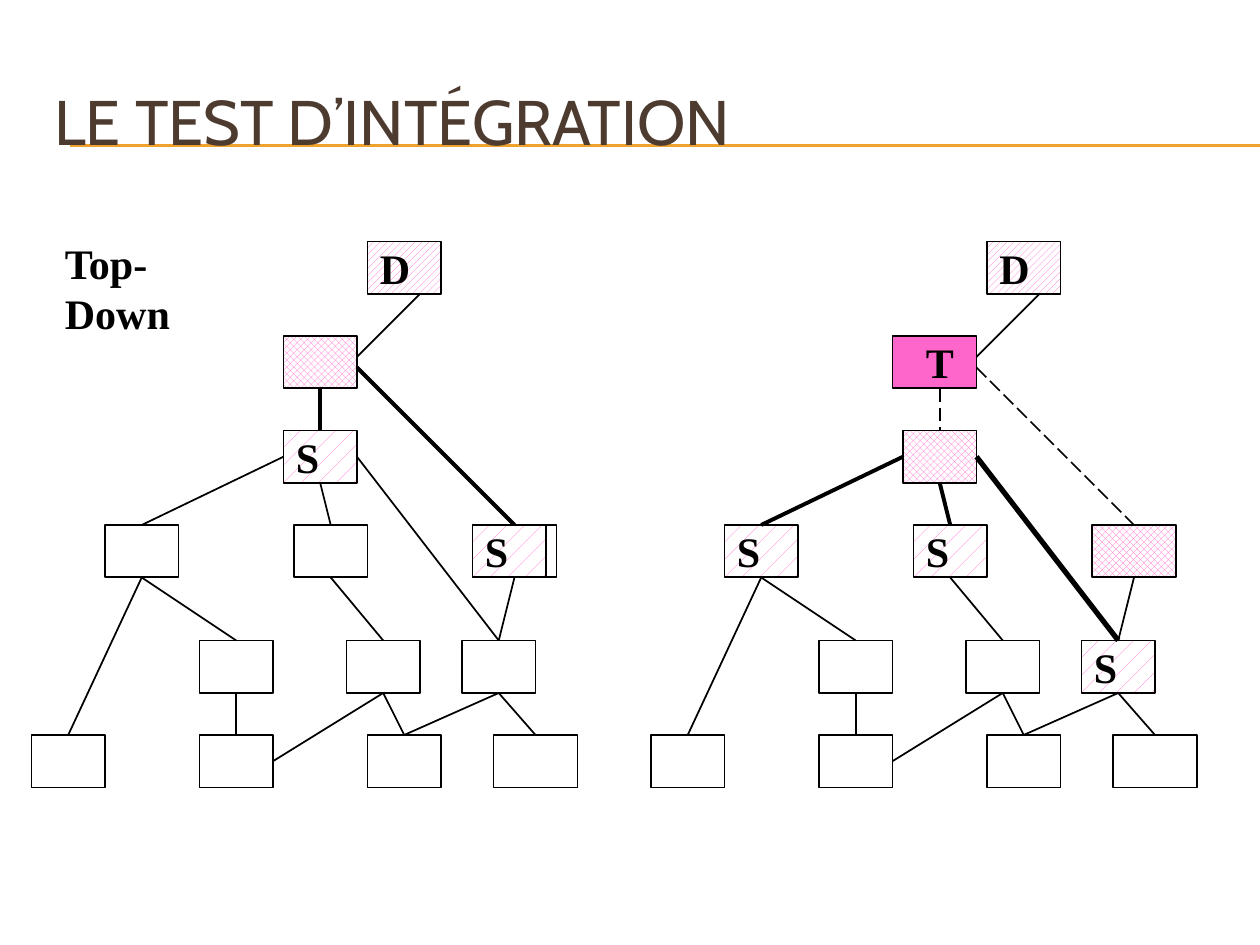
from dataclasses import dataclass
from typing import Optional

from lxml import etree
from pptx import Presentation
from pptx import util as u
from pptx.dml.color import RGBColor
from pptx.enum import dml, shapes, text
from pptx.oxml import ns

COLOURS = {"ink": "000000", "title": "4E3B30", "rule": "F0A22E",
           "pink": "FF66CC", "paper": "FFFFFF"}
PATTERNS = {"driver": dml.MSO_PATTERN.WIDE_UPWARD_DIAGONAL,
            "tested": dml.MSO_PATTERN.OUTLINED_DIAMOND,
            "stub": dml.MSO_PATTERN.PERCENT_5}
LABEL_FONT = {"name": "Times New Roman", "size": u.Pt(24), "bold": True}
TITLE_FONT = {"name": "Cabin", "size": u.Pt(36), "bold": False}
FRAME = {"word_wrap": True, "vertical_anchor": text.MSO_ANCHOR.MIDDLE}
TOP, LEFT, BOTTOM, RIGHT = range(4)
NARROW, WIDE, HEIGHT = 42, 48, 30
TREE_GAP = 354


@dataclass(frozen=True)
class Module:
    x: float
    y: float
    width: float = NARROW


@dataclass(frozen=True)
class Link:
    """A line between two ends; an end is (module name, side) or a point."""
    start: tuple
    end: tuple
    kind: str = ""


@dataclass(frozen=True)
class Look:
    style: str
    label: str = ""


MODULES = {
    "driver": Module(210, 138), "root": Module(162, 192), "hub": Module(162, 246),
    "west": Module(60, 300), "centre": Module(168, 300), "east": Module(270, 300, WIDE),
    "low west": Module(114, 366), "low centre": Module(198, 366), "low east": Module(264, 366),
    "leaf 1": Module(18, 420), "leaf 2": Module(114, 420),
    "leaf 3": Module(210, 420), "leaf 4": Module(282, 420, WIDE),
}
LINKS = [
    Link((240, 168), (204, 204)),
    Link(("root", BOTTOM), ("hub", TOP), "root"),
    Link((204, 210), ("east", TOP), "root"),
    Link(("hub", LEFT), ("west", TOP), "hub"),
    Link(("hub", BOTTOM), ("centre", TOP), "hub"),
    Link(("hub", RIGHT), ("low east", TOP), "hub long"),
    Link(("east", BOTTOM), ("low east", TOP)),
    Link(("west", BOTTOM), ("low west", TOP)),
    Link(("west", BOTTOM), ("leaf 1", TOP)),
    Link(("low west", BOTTOM), ("leaf 2", TOP)),
    Link(("centre", BOTTOM), ("low centre", TOP)),
    Link(("low centre", BOTTOM), ("leaf 2", RIGHT)),
    Link(("low centre", BOTTOM), ("leaf 3", TOP)),
    Link(("low east", BOTTOM), ("leaf 4", TOP)),
    Link(("low east", BOTTOM), ("leaf 3", TOP)),
]
DRIVER, STUB, TESTED = Look("driver", "D"), Look("stub", "S"), Look("tested")
FIRST_STEP = {"driver": DRIVER, "root": TESTED, "hub": STUB}
SECOND_STEP = {"driver": DRIVER, "hub": TESTED, "west": STUB, "centre": STUB,
               "east": TESTED, "low east": STUB}


def rgb(name: str) -> RGBColor:
    return RGBColor.from_string(COLOURS[name])


def set_all(target, values: dict) -> None:
    for name, value in values.items():
        setattr(target, name, value)


def write(box, words: str, font: dict = LABEL_FONT, colour: str = "ink") -> None:
    set_all(box.text_frame, FRAME)
    para = box.text_frame.paragraphs[0]
    para.alignment = text.PP_ALIGN.LEFT
    span = para.add_run()
    span.text = words
    set_all(span.font, font)
    span.font.color.rgb = rgb(colour)


def add_label(page, x: float, y: float, width: float, height: float, words: str,
              font: dict = LABEL_FONT, colour: str = "ink"):
    box = page.shapes.add_textbox(u.Pt(x), u.Pt(y), u.Pt(width), u.Pt(height))
    write(box, words, font, colour)
    return box


def add_module(page, module: Module, shift: float, look: Optional[Look] = None):
    box = page.shapes.add_shape(shapes.MSO_SHAPE.RECTANGLE, u.Pt(module.x + shift),
                                u.Pt(module.y), u.Pt(module.width), u.Pt(HEIGHT))
    box.shadow.inherit = False
    box.line.color.rgb = rgb("ink")
    box.line.width = u.Pt(1)
    if look is None:
        box.fill.background()
    elif look.style in PATTERNS:
        box.fill.patterned()
        box.fill.pattern = PATTERNS[look.style]
        box.fill.fore_color.rgb = rgb("pink")
        box.fill.back_color.rgb = rgb("paper")
    else:
        box.fill.solid()
        box.fill.fore_color.rgb = rgb("pink")
    if look and look.label:
        write(box, look.label)
    return box


def add_line(page, start: tuple, end: tuple, colour: str, weight: float, dashed: bool = False):
    line = page.shapes.add_connector(shapes.MSO_CONNECTOR.STRAIGHT,
                                     *(u.Pt(value) for value in start + end))
    line.line.color.rgb = rgb(colour)
    line.line.width = u.Pt(weight)
    if dashed:
        line.line.dash_style = dml.MSO_LINE.LONG_DASH
    etree.SubElement(line._element.spPr, ns.qn("a:effectLst"))
    return line


def place(end: tuple, shift: float) -> tuple:
    """Return the point, in points, where a link ends."""
    if not isinstance(end[0], str):
        return end[0] + shift, end[1]
    module = MODULES[end[0]]
    across = {LEFT: 0, RIGHT: module.width}.get(end[1], module.width / 2)
    down = {TOP: 0, BOTTOM: HEIGHT}.get(end[1], HEIGHT / 2)
    return module.x + across + shift, module.y + down


def add_tree(page, shift: float, looks: dict, weights: dict, dashed: tuple = (),
             skip: tuple = ()) -> None:
    """Draw the modules not skipped, then the links, weighted by their kind."""
    boxes = {name: add_module(page, module, shift, looks.get(name))
             for name, module in MODULES.items() if name not in skip}
    for link in LINKS:
        line = add_line(page, place(link.start, shift), place(link.end, shift), "ink",
                        weights.get(link.kind, 1), link.kind in dashed)
        if link.start[0] in boxes:
            line.begin_connect(boxes[link.start[0]], link.start[1])
        if link.end[0] in boxes:
            line.end_connect(boxes[link.end[0]], link.end[1])


def main() -> None:
    deck = Presentation()
    deck.slide_width, deck.slide_height = u.Pt(720), u.Pt(540)
    page = deck.slides.add_slide(deck.slide_layouts[6])

    for y in (82.8, 83.5):
        add_line(page, (40, y), (720, y), "rule", 0.75)
    add_label(page, 24, 36, 684, 66, "LE TEST D’INTÉGRATION", TITLE_FONT, "title")
    add_label(page, 30, 150, 102, 29, "Top-Down")

    add_tree(page, 0, FIRST_STEP, {"root": 2.25})
    add_module(page, Module(270, 300), 0, STUB)

    add_tree(page, TREE_GAP, SECOND_STEP, {"hub": 2.25, "hub long": 3},
             dashed=("root",), skip=("root",))
    done = add_module(page, Module(156, 192, WIDE), TREE_GAP, Look("done"))
    page.shapes.add_group_shape([done, add_label(page, 522, 192, 25, 29, "T")])

    deck.save("out.pptx")


if __name__ == "__main__":
    main()
